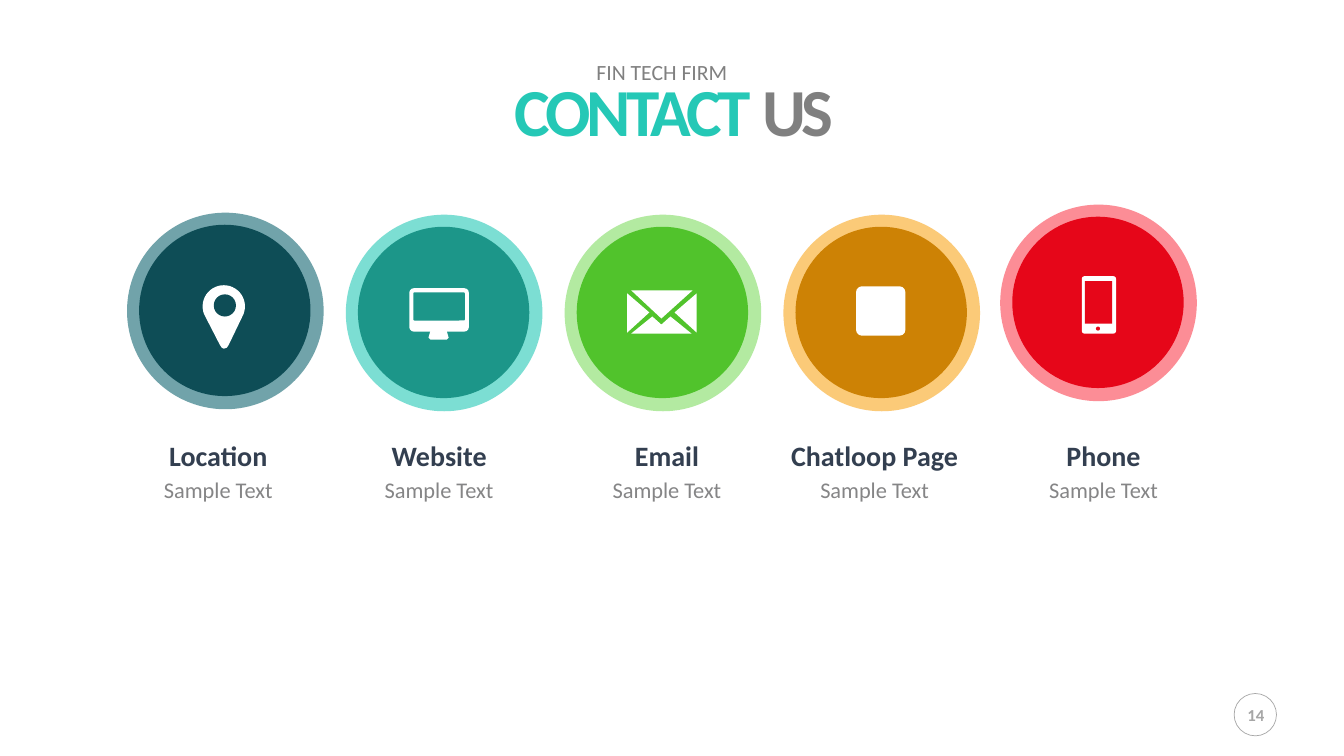
from math import cos, sin, radians
from pptx import Presentation
from pptx.util import Inches, Pt
from pptx.dml.color import RGBColor as RGB
from pptx.enum.shapes import MSO_SHAPE as Kind
from pptx.enum.text import PP_ALIGN as Align, MSO_ANCHOR as Anchor, MSO_AUTO_SIZE as Fit
from lxml.etree import SubElement
from pptx.oxml.ns import qn

COLORS = {
    "white": "FFFFFF", "teal": "25C8B6", "gray": "808080",
    "navy": "333F50", "soft": "858586", "pale": "A6A6A6",
}
ITEMS = [
    ("Location", 1.26, 2.11, 1.21, "136772", "0E4D56"),
    ("Website", 3.43, 2.13, 3.4, "25C8B6", "1C9689"),
    ("Email", 5.6, 2.13, 5.66, "81DC63", "51C32C"),
    ("Chatloop Page", 7.77, 2.13, 7.72, "F9A71F", "CD8205"),
    ("Phone", 9.92, 2.03, 9.99, "FA4151", "E60619"),
]

deck = Presentation()
deck.slide_width = Inches(13.33)
deck.slide_height = Inches(7.5)
slide = deck.slides.add_slide(deck.slide_layouts[5])
shapes = slide.shapes


def add_form(kind, box, fill, round_by=None):
    form = shapes.add_shape(kind, *[Inches(n) for n in box])
    form.shadow.inherit = False
    form.line.fill.background()
    form.fill.solid()
    form.fill.fore_color.rgb = RGB.from_string(fill)
    if round_by is not None:
        form.adjustments[0] = round_by
    return form


def add_label(words, box, size, color, bold=False):
    label = shapes.add_textbox(*[Inches(n) for n in box])
    label.text_frame.word_wrap = True
    para = label.text_frame.paragraphs[0]
    para.text = words
    para.alignment = Align.CENTER
    para.font.name = "Calibri"
    para.font.size = Pt(size)
    para.font.bold = bold
    para.font.color.rgb = RGB.from_string(COLORS[color])
    return label


title = shapes.title
title.left, title.top = Inches(2.05), Inches(0.67)
title.width, title.height = Inches(9.27), Inches(0.86)
frame = title.text_frame
frame.auto_size = Fit.NONE
frame.word_wrap = True
frame.vertical_anchor = Anchor.TOP
frame.margin_left = frame.margin_right = Inches(0.05)
frame.margin_top = frame.margin_bottom = Inches(0.02)
para = frame.paragraphs[0]
para.alignment = Align.CENTER
para.font.name = "Calibri"
para.font.size = Pt(48)
para.font.bold = True
for words, color in [("CONTACT ", "teal"), ("US", "gray")]:
    run = para.add_run()
    run.text = words
    run.font.color.rgb = RGB.from_string(COLORS[color])
    run.font._element.set("spc", "-300")

firm = add_label("FIN TECH FIRM", (3.38, 0.47, 6.37, 0.46), 15.5, "gray").text_frame
firm.margin_left = firm.margin_right = Inches(0.12)
firm.margin_top = firm.margin_bottom = Inches(0.06)
firm.paragraphs[0].line_spacing = 1.2
firm.paragraphs[0].space_before = Pt(3)

for name, left, top, text_left, rim, core in ITEMS:
    ring = add_form(Kind.OVAL, (left, top, 1.95, 1.95), rim)
    tint = ring.fill._xPr.find(qn("a:solidFill"))[0]
    SubElement(tint, qn("a:alpha")).set("val", "60000")
    add_form(Kind.OVAL, (left + 0.12, top + 0.12, 1.7, 1.7), core)
    add_label(name, (text_left, 4.3, 1.91, 0.44), 20, "navy", True)
    add_label("Sample Text", (text_left - 0.12, 4.67, 2.15, 0.37), 16, "soft")

white = COLORS["white"]
sea, web, mail, chat, phone = [item[-1] for item in ITEMS]
head = [(2.22 + 0.21 * cos(radians(a)), 3.04 + 0.21 * sin(radians(a)))
        for a in range(158, 383, 8)]
pin = head + [(2.27, 3.42), (2.25, 3.45), (2.22, 3.46), (2.2, 3.45), (2.18, 3.42)]
stand = [(4.27, 3.28), (4.43, 3.28), (4.45, 3.35), (4.43, 3.37), (4.27, 3.37), (4.25, 3.35)]
flap = [(6.26, 2.88), (6.87, 2.88), (6.56, 3.16)]
right = [(6.91, 2.91), (6.69, 3.1), (6.91, 3.3)]
left = [(6.22, 2.91), (6.44, 3.1), (6.22, 3.3)]
base = [(6.56, 3.22), (6.47, 3.14), (6.26, 3.31), (6.86, 3.31), (6.65, 3.14)]
for points in (pin, stand, flap, right, left, base):
    spots = [(Inches(x), Inches(y)) for x, y in points]
    pen = shapes.build_freeform(*spots[0], scale=1.0)
    pen.add_line_segments(spots[1:], close=True)
    icon = pen.convert_to_shape()
    icon.shadow.inherit = False
    icon.line.fill.background()
    icon.fill.solid()
    icon.fill.fore_color.rgb = RGB.from_string(white)

add_form(Kind.OVAL, (2.12, 2.92, 0.22, 0.22), sea)
add_form(Kind.ROUNDED_RECTANGLE, (4.06, 2.86, 0.59, 0.43), white, 0.1)
add_form(Kind.ROUNDED_RECTANGLE, (4.1, 2.9, 0.51, 0.28), web, 0.04)
add_form(Kind.ROUNDED_RECTANGLE, (8.49, 2.84, 0.49, 0.49), white, 0.12)
add_form(Kind.ROUNDED_RECTANGLE, (10.73, 2.74, 0.34, 0.57), white, 0.08)
add_form(Kind.RECTANGLE, (10.76, 2.79, 0.27, 0.42), phone)
add_form(Kind.OVAL, (10.87, 3.24, 0.04, 0.04), phone)

badge = add_form(Kind.OVAL, (12.24, 6.88, 0.42, 0.42), white)
badge.fill.background()
badge.line.color.rgb = RGB.from_string(COLORS["pale"])
badge.line.width = Pt(0.5)
page = add_label("14", (12.25, 6.94, 0.41, 0.3), 12, "pale", True)
page.text_frame.word_wrap = False

deck.save("out.pptx")
